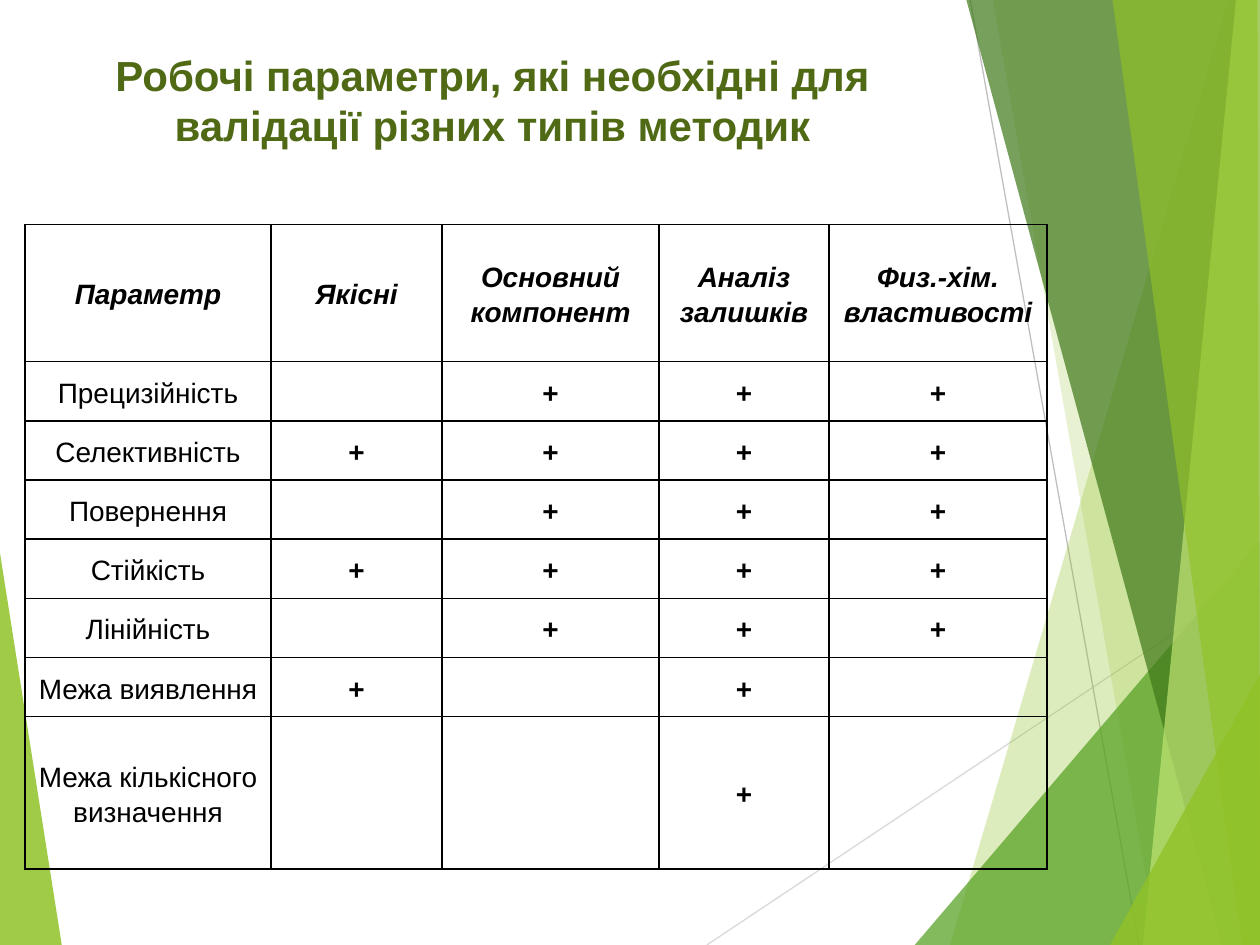
from lxml.etree import SubElement
from pptx import Presentation
from pptx.dml.color import RGBColor
from pptx.enum.text import MSO_ANCHOR, PP_ALIGN
from pptx.oxml import parse_xml
from pptx.oxml.ns import nsdecls, qn
from pptx.util import Emu, Inches, Pt

COLS, ROWS = 100, 75

LINES = [((56.1, 75), (100, 45.7), "D9D9D9"), ((77, 0), (90.4, 75), "BFBFBF")]

FACETS = [
    ([(97.5, 0), (75.4, 75), (100, 75), (100, 0)], "90C226", 30),
    ([(78.8, 0), (91.9, 75), (100, 75), (100, 0)], "90C226", 20),
    ([(72.6, 75), (100, 42.9), (100, 75)], "54A021", 72),
    ([(76.7, 0), (97, 75), (100, 75), (100, 0)], "3F7819", 70),
    ([(98.1, 0), (90.7, 75), (100, 75), (100, 0)], "C0E474", 70),
    ([(88.3, 0), (98.6, 75), (100, 75), (99.8, 0)], "90C226", 65),
    ([(88.1, 75), (100, 53.5), (100, 75)], "90C226", 80),
]
LEFT_FACET = ([(0, 43.9), (4.9, 75), (0, 75)], "90C226", 85)

TITLE = "Робочі параметри, які необхідні для валідації різних типів методик"
HEADER = ["Параметр", "Якісні", "Основний компонент", "Аналіз залишків",
          "Физ.-хім. властивості"]
MARKS = {
    "Прецизійність": " +++",
    "Селективність": "++++",
    "Повернення": " +++",
    "Стійкість": "++++",
    "Лінійність": " +++",
    "Межа виявлення": "+ + ",
    "Межа кількісного визначення": "  + ",
}
COL_WIDTHS = [19.5, 13.6, 17.2, 13.5, 17.3]
ROW_HEIGHTS = [10.9] + [4.7] * 6 + [12.1]


def rgb(value):
    """Turn a hex string into a colour."""
    return RGBColor.from_string(value)


def write(tf, text, size=16, color="000000", bold=False, italic=False, spacing=1.0):
    """Put one centred, formatted paragraph in a text frame."""
    p = tf.paragraphs[0]
    p.alignment = PP_ALIGN.CENTER
    p.line_spacing = spacing
    r = p.add_run()
    r.text = text
    r.font.name = "Arial"
    r.font.size = Pt(size)
    r.font.bold = bold
    r.font.italic = italic
    r.font.color.rgb = rgb(color)


class SlideBuilder:
    """Hold the slide, its grid and its style."""

    def __init__(self, prs):
        """Add a slide with only a title."""
        self.s = prs.slides.add_slide(prs.slide_layouts[5])
        self.col = prs.slide_width / COLS
        self.row = prs.slide_height / ROWS

    def x(self, n):
        """Give the length of n columns."""
        return Emu(round(n * self.col))

    def y(self, n):
        """Give the length of n rows."""
        return Emu(round(n * self.row))

    def line(self, start, end, color):
        """Draw a thin straight line."""
        ln = self.s.shapes.add_connector(1, self.x(start[0]), self.y(start[1]),
                                         self.x(end[0]), self.y(end[1]))
        ln.line.color.rgb = rgb(color)
        ln.line.width = Pt(0.75)
        SubElement(ln.element.spPr, qn("a:effectLst"))

    def facet(self, points, color, opacity):
        """Draw a translucent polygon."""
        first, *rest = [(self.x(a), self.y(b)) for a, b in points]
        fb = self.s.shapes.build_freeform(*first)
        fb.add_line_segments(rest, close=True)
        sp = fb.convert_to_shape()
        sp.shadow.inherit = False
        sp.line.fill.background()
        sp.fill.solid()
        sp.fill.fore_color.rgb = rgb(color)
        clr = sp.element.spPr.find(".//" + qn("a:srgbClr"))
        SubElement(clr, qn("a:alpha"), val=str(opacity * 1000))

    def title(self, text, left, top, width, height):
        """Place the title in front of the facets."""
        sp = self.s.shapes.title
        sp.left, sp.top = self.x(left), self.y(top)
        sp.width, sp.height = self.x(width), self.y(height)
        sp.element.getparent().append(sp.element)
        sp.text_frame.word_wrap = True
        sp.text_frame.vertical_anchor = MSO_ANCHOR.TOP
        write(sp.text_frame, text, size=24, color="4F6915", bold=True)

    def cell(self, cell, text, **fmt):
        """Fill one clear, bordered table cell."""
        cell.margin_left = cell.margin_right = Inches(0.07)
        cell.margin_top = cell.margin_bottom = 0
        cell.vertical_anchor = MSO_ANCHOR.MIDDLE
        cell.fill.background()
        tcPr = cell._tc.get_or_add_tcPr()
        for i, side in enumerate("LRTB"):
            tcPr.insert(i, parse_xml(
                f'<a:ln{side} {nsdecls("a")} w="12700"><a:solidFill>'
                f'<a:srgbClr val="000000"/></a:solidFill></a:ln{side}>'))
        if text.strip():
            write(cell.text_frame, text, spacing=1.15, **fmt)

    def table(self, left, top, widths, heights, rows):
        """Draw the table with an italic header and bold marks."""
        tbl = self.s.shapes.add_table(
            len(heights), len(widths), self.x(left), self.y(top),
            self.x(sum(widths)), self.y(sum(heights))).table
        tbl.first_row = tbl.horz_banding = False
        for column, width in zip(tbl.columns, widths):
            column.width = self.x(width)
        for row, height in zip(tbl.rows, heights):
            row.height = self.y(height)
        for i, texts in enumerate(rows):
            for j, text in enumerate(texts):
                self.cell(tbl.cell(i, j), text, bold=i == 0 or j > 0, italic=i == 0)


def main():
    """Build and save the slide."""
    prs = Presentation()
    prs.slide_width, prs.slide_height = Inches(10), Inches(7.5)
    b = SlideBuilder(prs)
    b.facet(*LEFT_FACET)
    for line in LINES:
        b.line(*line)
    for facet in FACETS:
        b.facet(*facet)
    b.title(TITLE, 2.8, 3.4, 72.6, 14.4)
    rows = [HEADER] + [[name, *marks] for name, marks in MARKS.items()]
    b.table(2, 17.8, COL_WIDTHS, ROW_HEIGHTS, rows)
    prs.save("out.pptx")


if __name__ == "__main__":
    main()
